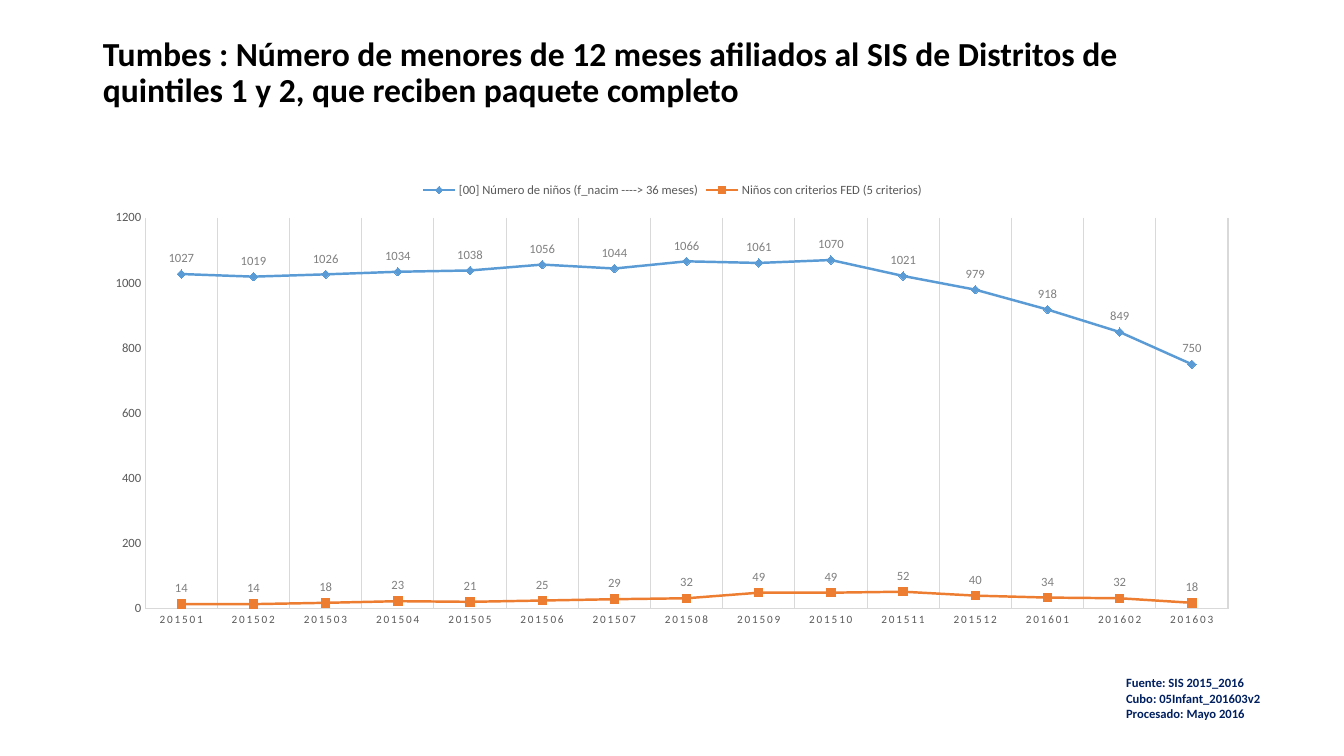
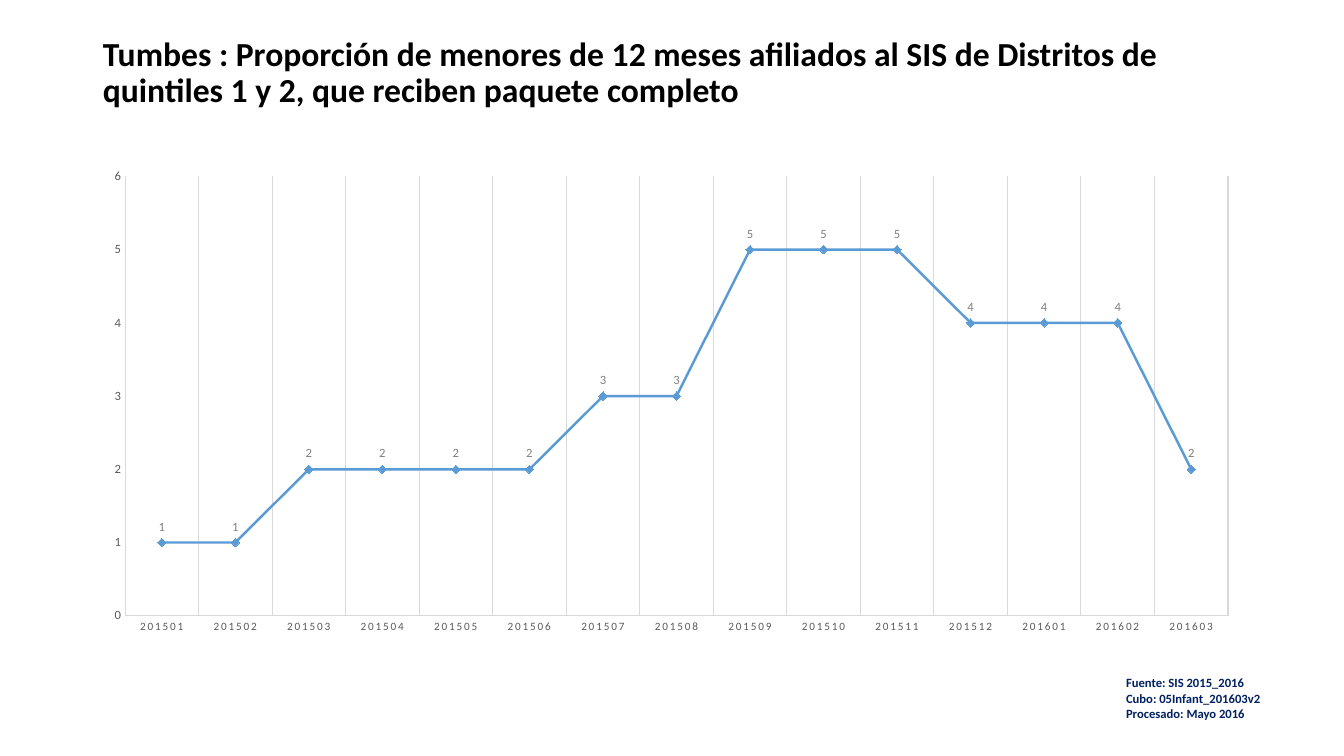
from lxml.etree import SubElement
from pptx import Presentation
from pptx.chart.data import CategoryChartData
from pptx.dml.color import RGBColor
from pptx.enum.chart import (XL_CHART_TYPE, XL_LABEL_POSITION, XL_LEGEND_POSITION,
                             XL_MARKER_STYLE, XL_TICK_MARK)
from pptx.enum.text import MSO_ANCHOR, MSO_AUTO_SIZE, PP_ALIGN
from pptx.oxml.ns import qn
from pptx.util import Pt

# Shared style
PX = 9144  # 100 px per inch
FONT = "Calibri"
BLACK = RGBColor(0x00, 0x00, 0x00)
NAVY = RGBColor(0x00, 0x20, 0x60)
AXIS_GRAY = RGBColor(0x59, 0x59, 0x59)
LABEL_GRAY = RGBColor(0x80, 0x80, 0x80)
GRID_GRAY = RGBColor(0xD9, 0xD9, 0xD9)
BLUE = RGBColor(0x5B, 0x9B, 0xD5)
ORANGE = RGBColor(0xED, 0x7D, 0x31)
SERIES_STYLES = [(BLUE, XL_MARKER_STYLE.DIAMOND), (ORANGE, XL_MARKER_STYLE.SQUARE)]

TITLE_BOX = (92, 40, 1150, 66)
SOURCE_BOX = (1107, 665, 227, 85)

# Content
SOURCE_LINES = ["Fuente: SIS 2015_2016", "Cubo: 05Infant_201603v2", "Procesado: Mayo 2016"]
MONTHS = ([f"2015{month:02d}" for month in range(1, 13)]
          + [f"2016{month:02d}" for month in range(1, 4)])
TITLE = ("Tumbes : {} de menores de 12 meses afiliados al SIS de Distritos de "
         "quintiles 1 y 2, que reciben paquete completo")
SLIDES = [
    {
        "title": TITLE.format("Número"),
        "chart_box": (92, 170, 1150, 461),
        "plot_box": (144, 216, 1074, 388),
        "maximum": 1200, "step": 200, "legend": True,
        "series": [
            ("[00] Número de niños (f_nacim ----> 36 meses)",
             [1027, 1019, 1026, 1034, 1038, 1056, 1044, 1066, 1061, 1070,
              1021, 979, 918, 849, 750]),
            ("Niños con criterios FED (5 criterios)",
             [14, 14, 18, 23, 21, 25, 29, 32, 49, 49, 52, 40, 34, 32, 18]),
        ],
    },
    {
        "title": TITLE.format("Proporción"),
        "chart_box": (92, 158, 1150, 481),
        "plot_box": (124, 175, 1094, 436),
        "maximum": 6, "step": 1, "legend": False,
        "series": [("Series 1", [1, 1, 2, 2, 2, 2, 3, 3, 5, 5, 5, 4, 4, 4, 2])],
    },
]


def emu(box):
    return [length * PX for length in box]


def style_font(font, size, color, bold=False):
    font.name, font.size, font.bold = FONT, Pt(size), bold
    font.color.rgb = color


def style_line(line, color, width):
    line.color.rgb = color
    line.width = Pt(width)


def add_title(slide, text):
    title = slide.shapes.title
    title.left, title.top, title.width, title.height = emu(TITLE_BOX)
    frame = title.text_frame
    frame.text = text
    frame.word_wrap = True
    frame.auto_size = MSO_AUTO_SIZE.NONE
    frame.vertical_anchor = MSO_ANCHOR.MIDDLE
    paragraph = frame.paragraphs[0]
    paragraph.alignment = PP_ALIGN.LEFT
    paragraph.line_spacing = 0.9
    style_font(paragraph.runs[0].font, 24, BLACK, bold=True)


def add_source(slide):
    frame = slide.shapes.add_textbox(*emu(SOURCE_BOX)).text_frame
    frame.word_wrap = True
    frame.text = "\n".join(SOURCE_LINES)
    for paragraph in frame.paragraphs:
        style_font(paragraph.runs[0].font, 9, NAVY, bold=True)


def place_plot(chart, plot_box, chart_box):
    """Fix the inner plot area as fractions of the chart frame."""
    left, top, width, height = chart_box
    x, y, plot_width, plot_height = plot_box
    plot_area = chart.plots[0]._element.getparent()
    layout = plot_area.find(qn("c:layout"))
    if layout is None:
        layout = SubElement(plot_area, qn("c:layout"))
        plot_area.insert(0, layout)
    manual = SubElement(layout, qn("c:manualLayout"))
    settings = [("layoutTarget", "inner"), ("xMode", "edge"), ("yMode", "edge"),
                ("x", (x - left) / width), ("y", (y - top) / height),
                ("w", plot_width / width), ("h", plot_height / height)]
    for name, value in settings:
        SubElement(manual, qn(f"c:{name}")).set("val", str(value))


def style_axes(chart, maximum, step):
    for axis, size in ((chart.category_axis, 8), (chart.value_axis, 9)):
        axis.major_tick_mark = axis.minor_tick_mark = XL_TICK_MARK.NONE
        style_font(axis.tick_labels.font, size, AXIS_GRAY)
        style_line(axis.format.line, GRID_GRAY, 0.75)
    months, values = chart.category_axis, chart.value_axis
    months.has_major_gridlines = True
    style_line(months.major_gridlines.format.line, GRID_GRAY, 0.75)
    # Letter spacing of the month labels
    next(months._element.iter(qn("a:defRPr"))).set("spc", "120")
    values.has_major_gridlines = False
    values.minimum_scale, values.maximum_scale, values.major_unit = 0, maximum, step
    values.tick_labels.number_format = "0"
    values.tick_labels.number_format_is_linked = False


def style_series(series, color, marker_style):
    series.smooth = False
    style_line(series.format.line, color, 1.75)
    marker = series.marker
    marker.style, marker.size = marker_style, 6
    marker.format.fill.solid()
    marker.format.fill.fore_color.rgb = color
    style_line(marker.format.line, color, 0.75)
    labels = series.data_labels
    labels.show_value = True
    labels.position = XL_LABEL_POSITION.ABOVE
    labels.number_format, labels.number_format_is_linked = "0", False
    style_font(labels.font, 9, LABEL_GRAY)


def add_line_chart(slide, content):
    data = CategoryChartData(number_format="0")
    data.categories = MONTHS
    for name, values in content["series"]:
        data.add_series(name, values)
    chart = slide.shapes.add_chart(
        XL_CHART_TYPE.LINE_MARKERS, *emu(content["chart_box"]), data).chart
    style_font(chart.font, 10, BLACK)
    chart.has_title = False
    chart.plots[0].vary_by_categories = False
    chart.has_legend = content["legend"]
    if chart.has_legend:
        chart.legend.position = XL_LEGEND_POSITION.TOP
        chart.legend.include_in_layout = False
        style_font(chart.legend.font, 9, AXIS_GRAY)
    style_axes(chart, content["maximum"], content["step"])
    for series, style in zip(chart.plots[0].series, SERIES_STYLES):
        style_series(series, *style)
    place_plot(chart, content["plot_box"], content["chart_box"])


def main():
    presentation = Presentation()
    presentation.slide_width, presentation.slide_height = emu((1333, 750))
    title_only = presentation.slide_layouts[5]
    for content in SLIDES:
        slide = presentation.slides.add_slide(title_only)
        add_title(slide, content["title"])
        add_source(slide)
        add_line_chart(slide, content)
    presentation.save("out.pptx")


if __name__ == "__main__":
    main()
